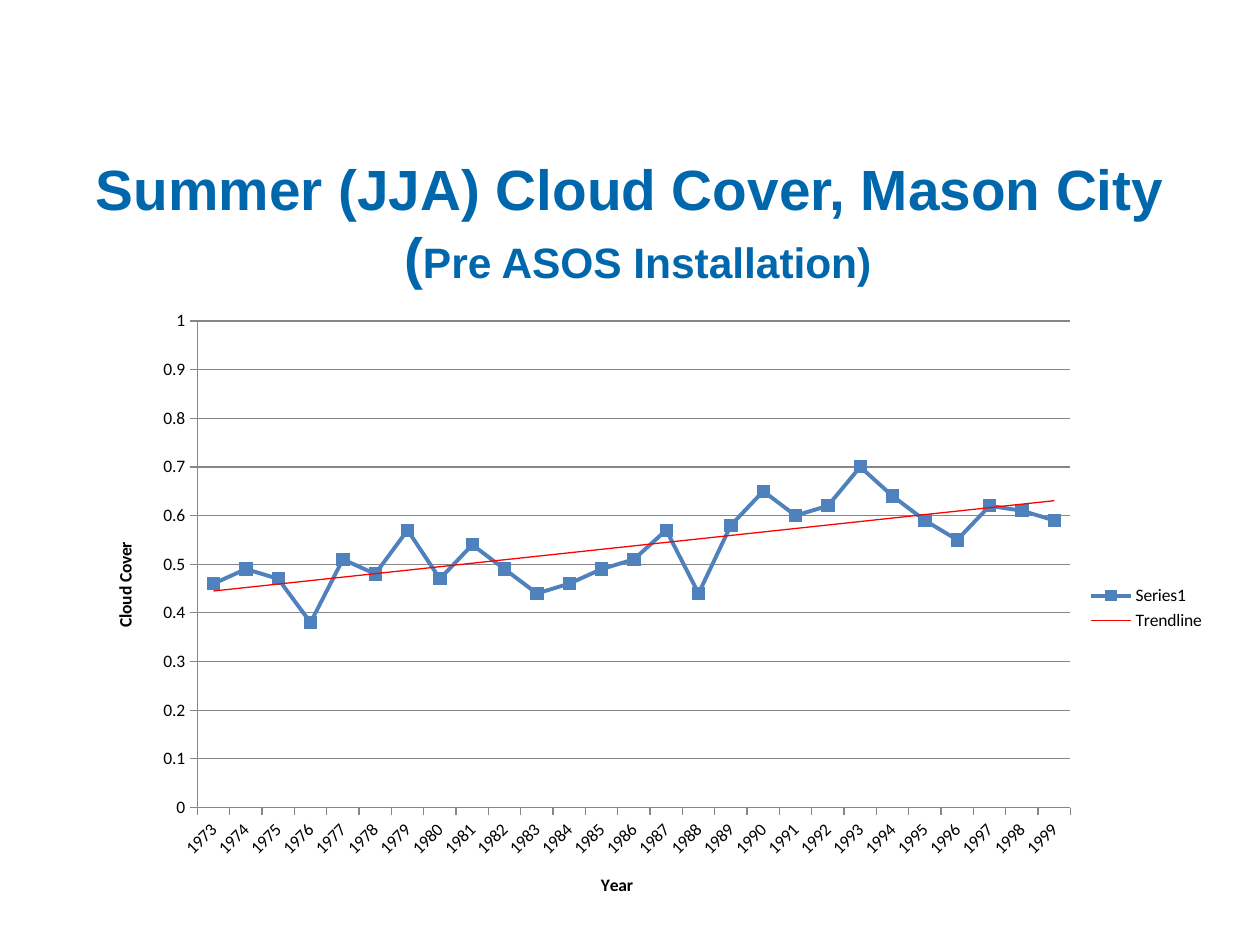
from lxml import etree
from pptx import Presentation
from pptx import util as u
from pptx.chart.data import CategoryChartData
from pptx.dml.color import RGBColor
from pptx.enum import chart as c, text as t
from pptx.oxml import parse_xml
from pptx.oxml.ns import nsdecls, qn

PX = u.Inches(1) / 126

TITLE_BLUE = RGBColor(0x00, 0x67, 0xAC)
SERIES_BLUE = RGBColor(0x4F, 0x81, 0xBD)
GRID_GRAY = RGBColor(0x86, 0x86, 0x86)
BLACK = RGBColor(0, 0, 0)

YEARS = range(1973, 2000)
CLOUD_COVER = [
    0.46, 0.49, 0.47, 0.38, 0.51, 0.48, 0.57, 0.47, 0.54,
    0.49, 0.44, 0.46, 0.49, 0.51, 0.57, 0.44, 0.58, 0.65,
    0.60, 0.62, 0.70, 0.64, 0.59, 0.55, 0.62, 0.61, 0.59,
]


def px(*lengths):
    """Turn pixel lengths into EMU."""
    return [u.Emu(round(length * PX)) for length in lengths]


def set_title(slide):
    title = slide.shapes.title
    title.left, title.top, title.width, title.height = px(63, 168, 1134, 128)
    frame = title.text_frame
    frame.word_wrap = True
    frame.auto_size = t.MSO_AUTO_SIZE.NONE
    frame.vertical_anchor = t.MSO_ANCHOR.BOTTOM
    paragraph = frame.paragraphs[0]
    paragraph.text = "Summer (JJA) Cloud Cover, Mason City\v ("
    paragraph.alignment = t.PP_ALIGN.CENTER
    font = paragraph.font
    font.name, font.size, font.bold = "Arial", u.Pt(32.4), True
    font.color.rgb = TITLE_BLUE
    subtitle = paragraph.add_run()
    subtitle.text = "Pre ASOS Installation)"
    subtitle.font.size = u.Pt(24.3)


def format_axis(axis, title):
    axis.major_tick_mark = c.XL_TICK_MARK.OUTSIDE
    axis.minor_tick_mark = c.XL_TICK_MARK.NONE
    axis.format.line.color.rgb = GRID_GRAY
    axis.format.line.width = u.Pt(0.75)
    paragraph = axis.axis_title.text_frame.paragraphs[0]
    paragraph.text = title
    font = paragraph.font
    font.name, font.size, font.bold = "Calibri", u.Pt(10), True
    font.color.rgb = BLACK


def format_series(series):
    series.smooth = False
    series.format.line.color.rgb = SERIES_BLUE
    series.format.line.width = u.Pt(2.25)
    marker = series.marker
    marker.style, marker.size = c.XL_MARKER_STYLE.SQUARE, 7
    marker.format.fill.solid()
    marker.format.fill.fore_color.rgb = SERIES_BLUE
    marker.format.line.color.rgb = SERIES_BLUE


def add_trendline(series):
    trendline = parse_xml(
        f'<c:trendline {nsdecls("c", "a")}><c:name>Trendline</c:name>'
        '<c:spPr><a:ln w="9525"><a:solidFill><a:srgbClr val="FF0000"/>'
        '</a:solidFill></a:ln></c:spPr><c:trendlineType val="linear"/>'
        '<c:dispRSqr val="0"/><c:dispEq val="0"/></c:trendline>')
    series._element.find(qn("c:cat")).addprevious(trendline)


def place_plot(chart, **fractions):
    """Fix the inner plot area as fractions of the chart."""
    plot_area = chart._chartSpace.chart.plotArea
    for layout in plot_area.findall(qn("c:layout")):
        plot_area.remove(layout)
    layout = etree.Element(qn("c:layout"))
    manual = etree.SubElement(layout, qn("c:manualLayout"))
    settings = {"layoutTarget": "inner", "xMode": "edge", "yMode": "edge", **fractions}
    for name, value in settings.items():
        etree.SubElement(manual, qn(f"c:{name}")).set("val", str(value))
    plot_area.insert(0, layout)


def add_cloud_chart(slide):
    data = CategoryChartData()
    data.categories = [str(year) for year in YEARS]
    data.add_series("Series1", CLOUD_COVER)
    chart = slide.shapes.add_chart(
        c.XL_CHART_TYPE.LINE_MARKERS, *px(84, 296, 1134, 624), data).chart
    chart.has_title = False
    chart.font.name, chart.font.size = "Calibri", u.Pt(10)
    chart.font.color.rgb = BLACK
    chart.has_legend = True
    chart.legend.position = c.XL_LEGEND_POSITION.RIGHT
    chart.legend.include_in_layout = False

    years, cover = chart.category_axis, chart.value_axis
    format_axis(years, "Year")
    format_axis(cover, "Cloud Cover")
    years.tick_labels.font.size = u.Pt(10)
    label_body = years._element.find(f'{qn("c:txPr")}/{qn("a:bodyPr")}')
    label_body.set("rot", "-2700000")
    cover.minimum_scale, cover.maximum_scale, cover.major_unit = 0, 1, 0.1
    cover.tick_labels.number_format = "General"
    cover.tick_labels.number_format_is_linked = False
    cover.has_major_gridlines = True
    cover.major_gridlines.format.line.color.rgb = GRID_GRAY
    cover.major_gridlines.format.line.width = u.Pt(0.75)

    plot = chart.plots[0]
    plot.vary_by_categories = False
    format_series(plot.series[0])
    add_trendline(plot.series[0])
    place_plot(chart, x=0.1, y=0.04, w=0.77, h=0.78)


def main():
    presentation = Presentation()
    presentation.slide_width, presentation.slide_height = px(1260, 945)
    slide = presentation.slides.add_slide(presentation.slide_layouts[5])
    set_title(slide)
    add_cloud_chart(slide)
    presentation.save("out.pptx")


if __name__ == "__main__":
    main()
